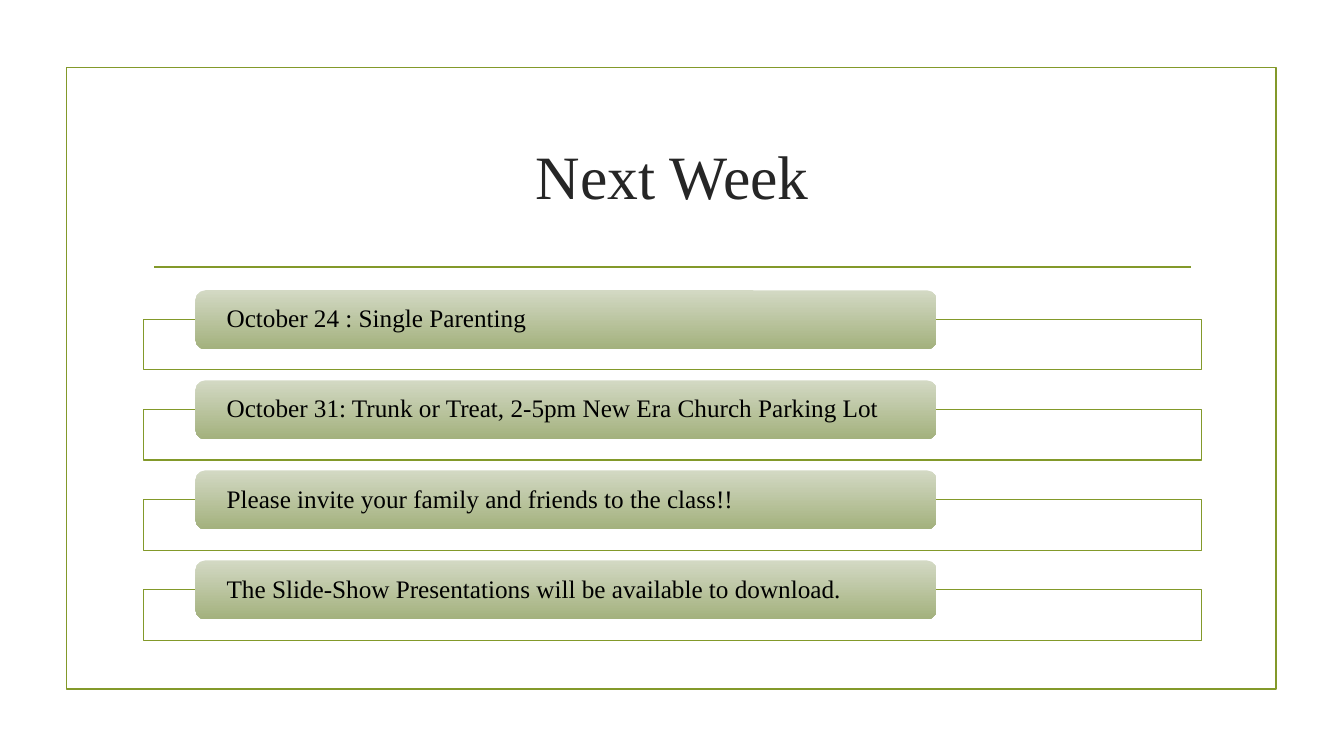
import lxml.etree
import pptx
import pptx.dml.color
import pptx.enum.shapes
import pptx.enum.text
import pptx.oxml.ns
import pptx.util

RGBColor = pptx.dml.color.RGBColor
SHAPE = pptx.enum.shapes.MSO_SHAPE
ALIGN = pptx.enum.text.PP_ALIGN

OLIVE = RGBColor(0x83, 0x99, 0x2A)
LIGHT_GREEN = RGBColor(0xD3, 0xD9, 0xC4)
DARK_GREEN = RGBColor(0xA3, 0xB1, 0x7D)
WHITE = RGBColor(0xFF, 0xFF, 0xFF)
BLACK = RGBColor(0, 0, 0)
CHARCOAL = RGBColor(0x26, 0x26, 0x26)

ANNOUNCEMENTS = (
    "October 24 : Single Parenting",
    "October 31: Trunk or Treat, 2-5pm New Era Church Parking Lot",
    "Please invite your family and friends to the class!!",
    "The Slide-Show Presentations will be available to download.",
)
FIRST_ROW, ROW_STEP = 38.4, 11.91
CONTENT_LEFT, CONTENT_WIDTH = 10.65, 78.77


class SlideBuilder:
    """Draws on one slide; all lengths are percentages of the slide's size."""

    font = "Times New Roman"

    def __init__(self, prs):
        self.width, self.height = prs.slide_width, prs.slide_height
        self.s = prs.slides.add_slide(prs.slide_layouts[6])

    def x(self, share):
        return round(self.width * share / 100)

    def y(self, share):
        return round(self.height * share / 100)

    def box(self, left, top, width, height):
        return self.x(left), self.y(top), self.x(width), self.y(height)

    def outline(self, *box, weight, opacity=None):
        """Rectangle with an olive edge, hollow unless an opacity is given."""
        sp = self.s.shapes.add_shape(SHAPE.RECTANGLE, *self.box(*box))
        sp.shadow.inherit = False
        sp.line.color.rgb = OLIVE
        sp.line.width = pptx.util.Pt(weight)
        if opacity is None:
            sp.fill.background()
        else:
            sp.fill.solid()
            sp.fill.fore_color.rgb = WHITE
            color = sp._element.spPr.find(
                pptx.oxml.ns.qn("a:solidFill") + "/" + pptx.oxml.ns.qn("a:srgbClr"))
            alpha = lxml.etree.SubElement(color, pptx.oxml.ns.qn("a:alpha"))
            alpha.set("val", str(opacity * 1000))

    def rule(self, left, right, top):
        line = self.s.shapes.add_connector(
            pptx.enum.shapes.MSO_CONNECTOR.STRAIGHT,
            self.x(left), self.y(top), self.x(right), self.y(top))
        line.line.color.rgb = OLIVE
        line.line.width = pptx.util.Pt(1.25)
        lxml.etree.SubElement(line._element.spPr, pptx.oxml.ns.qn("a:effectLst"))

    def set_text(self, sp, text, size, color, align, inset):
        tf = sp.text_frame
        tf.word_wrap = True
        tf.vertical_anchor = pptx.enum.text.MSO_ANCHOR.MIDDLE
        tf.margin_left = tf.margin_right = self.x(inset)
        tf.margin_top = tf.margin_bottom = 0
        p = tf.paragraphs[0]
        p.text = text
        p.alignment = align
        p.line_spacing = 0.9
        p.font.name = self.font
        p.font.size = pptx.util.Pt(size)
        p.font.color.rgb = color

    def title(self, text, *box):
        sp = self.s.shapes.add_textbox(*self.box(*box))
        self.set_text(sp, text, 44, CHARCOAL, ALIGN.CENTER, 0.75)

    def banner(self, text, *box):
        """Rounded bar shaded from light to dark green, top to bottom."""
        sp = self.s.shapes.add_shape(SHAPE.ROUNDED_RECTANGLE, *self.box(*box))
        sp.shadow.inherit = False
        sp.line.fill.background()
        sp.fill.gradient()
        sp.fill.gradient_angle = 270
        for stop, color in zip(sp.fill.gradient_stops, (LIGHT_GREEN, DARK_GREEN)):
            stop.color.rgb = color
        self.set_text(sp, text, 18, BLACK, ALIGN.LEFT, 2.1)


def main():
    prs = pptx.Presentation()
    prs.slide_width = pptx.util.Inches(13.33)
    prs.slide_height = pptx.util.Inches(7.5)
    slide = SlideBuilder(prs)

    slide.outline(4.95, 8.93, 90, 82.27, weight=1.25)
    slide.rule(11.48, 88.6, 35.33)
    slide.title("Next Week", CONTENT_LEFT, 14.27, CONTENT_WIDTH, 19.07)
    for i, text in enumerate(ANNOUNCEMENTS):
        top = FIRST_ROW + i * ROW_STEP
        slide.outline(CONTENT_LEFT, top + 3.87, CONTENT_WIDTH, 6.67,
                      weight=0.75, opacity=90)
        slide.banner(text, 14.55, top, 55.14, 7.8)

    prs.save("out.pptx")


if __name__ == "__main__":
    main()
